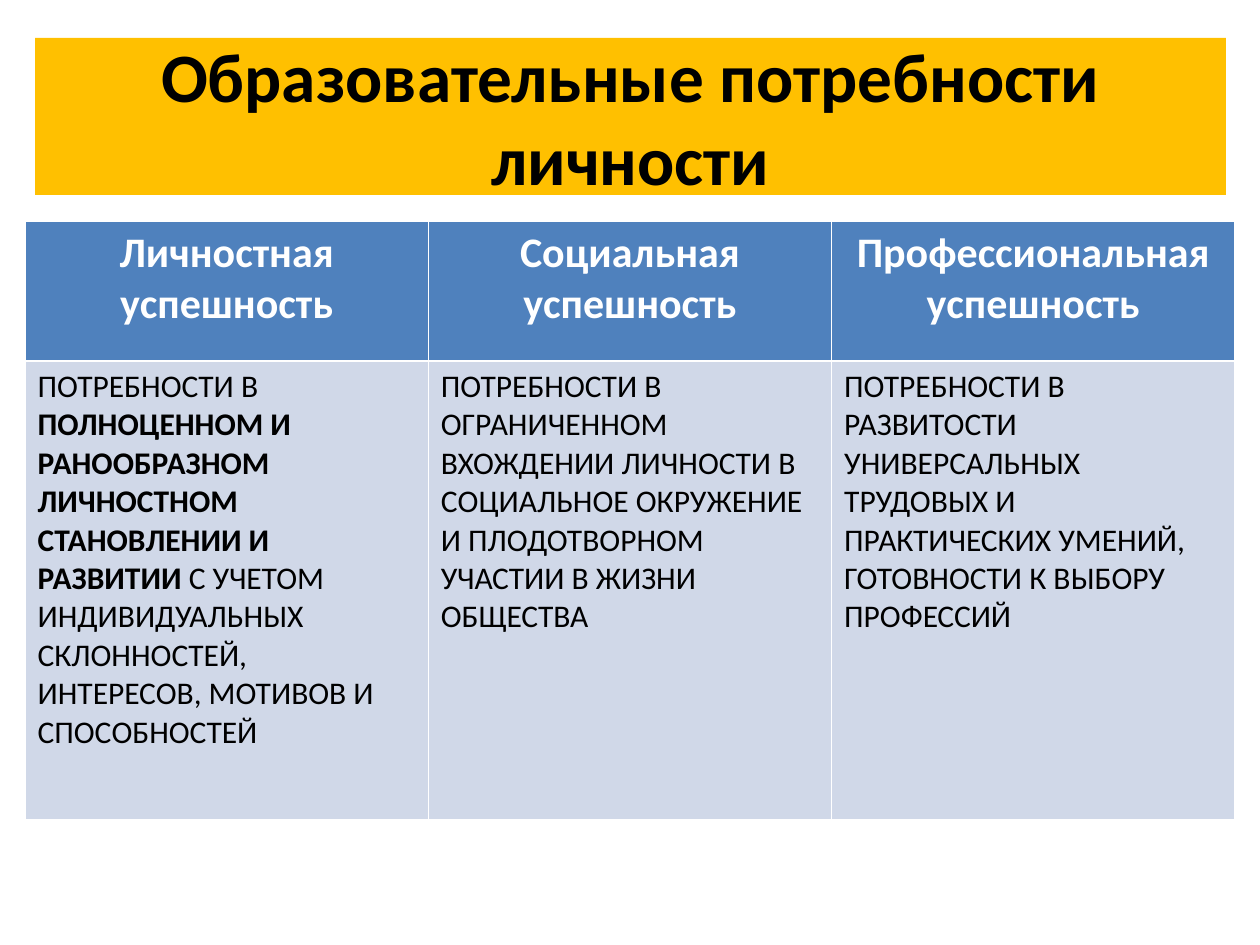
"""Build a slide with a title band and a three-column table of educational needs."""
import pptx
import pptx.dml.color
import pptx.enum.text
import pptx.util

TITLE = "Образовательные потребности личности"
COLUMNS = [
    ("Личностная успешность", [
        ("ПОТРЕБНОСТИ В ", False),
        ("ПОЛНОЦЕННОМ И РАНООБРАЗНОМ ЛИЧНОСТНОМ СТАНОВЛЕНИИ И РАЗВИТИИ ", True),
        ("С УЧЕТОМ ИНДИВИДУАЛЬНЫХ СКЛОННОСТЕЙ, ИНТЕРЕСОВ, МОТИВОВ И СПОСОБНОСТЕЙ", False),
    ]),
    ("Социальная успешность", [
        ("ПОТРЕБНОСТИ В ОГРАНИЧЕННОМ ВХОЖДЕНИИ ЛИЧНОСТИ В СОЦИАЛЬНОЕ ОКРУЖЕНИЕ "
         "И ПЛОДОТВОРНОМ УЧАСТИИ В ЖИЗНИ ОБЩЕСТВА", False),
    ]),
    ("Профессиональная успешность", [
        ("ПОТРЕБНОСТИ В РАЗВИТОСТИ УНИВЕРСАЛЬНЫХ ТРУДОВЫХ И ПРАКТИЧЕСКИХ УМЕНИЙ, "
         "ГОТОВНОСТИ К ВЫБОРУ ПРОФЕССИЙ", False),
    ]),
]

PX = 914400 // 126
SLIDE_SIZE = (1260, 945)
TITLE_BOX = (35, 38, 1191, 157)
TABLE_LEFT, TABLE_TOP, TABLE_WIDTH = 25, 221, 1210
ROW_HEIGHTS = (140, 459)

FONT = "Calibri"
AMBER = pptx.dml.color.RGBColor(0xFF, 0xC0, 0x00)
BLUE = pptx.dml.color.RGBColor(0x4F, 0x81, 0xBD)
PALE_BLUE = pptx.dml.color.RGBColor(0xD0, 0xD8, 0xE8)
BLACK = pptx.dml.color.RGBColor(0x00, 0x00, 0x00)
WHITE = pptx.dml.color.RGBColor(0xFF, 0xFF, 0xFF)
CENTER = pptx.enum.text.PP_ALIGN.CENTER
LEFT = pptx.enum.text.PP_ALIGN.LEFT


def paint(shape, color):
    shape.fill.solid()
    shape.fill.fore_color.rgb = color


def write(frame, parts, size, color, align):
    para = frame.paragraphs[0]
    para.alignment = align
    para.font.name = FONT
    para.font.size = pptx.util.Pt(size)
    para.font.color.rgb = color
    for text, bold in parts:
        span = para.add_run()
        span.text = text
        span.font.name = FONT
        span.font.size = pptx.util.Pt(size)
        span.font.color.rgb = color
        span.font.bold = bold


def add_title(page):
    title = page.shapes.title
    title.left, title.top, title.width, title.height = (n * PX for n in TITLE_BOX)
    paint(title, AMBER)
    frame = title.text_frame
    frame.auto_size = pptx.enum.text.MSO_AUTO_SIZE.NONE
    frame.vertical_anchor = pptx.enum.text.MSO_ANCHOR.MIDDLE
    write(frame, [(TITLE, True)], 39.6, BLACK, CENTER)


def add_needs_table(page):
    table = page.shapes.add_table(
        len(ROW_HEIGHTS), len(COLUMNS), TABLE_LEFT * PX, TABLE_TOP * PX,
        TABLE_WIDTH * PX, sum(ROW_HEIGHTS) * PX).table
    table.horz_banding = False
    for row, height in zip(table.rows, ROW_HEIGHTS):
        row.height = height * PX
    for index, (heading, needs) in enumerate(COLUMNS):
        head, body = table.cell(0, index), table.cell(1, index)
        paint(head, BLUE)
        write(head.text_frame, [(heading, True)], 24, WHITE, CENTER)
        paint(body, PALE_BLUE)
        write(body.text_frame, needs, 18, BLACK, LEFT)


def main():
    deck = pptx.Presentation()
    deck.slide_width, deck.slide_height = (n * PX for n in SLIDE_SIZE)
    page = deck.slides.add_slide(deck.slide_layouts[5])
    add_title(page)
    add_needs_table(page)
    deck.save("out.pptx")


if __name__ == "__main__":
    main()
